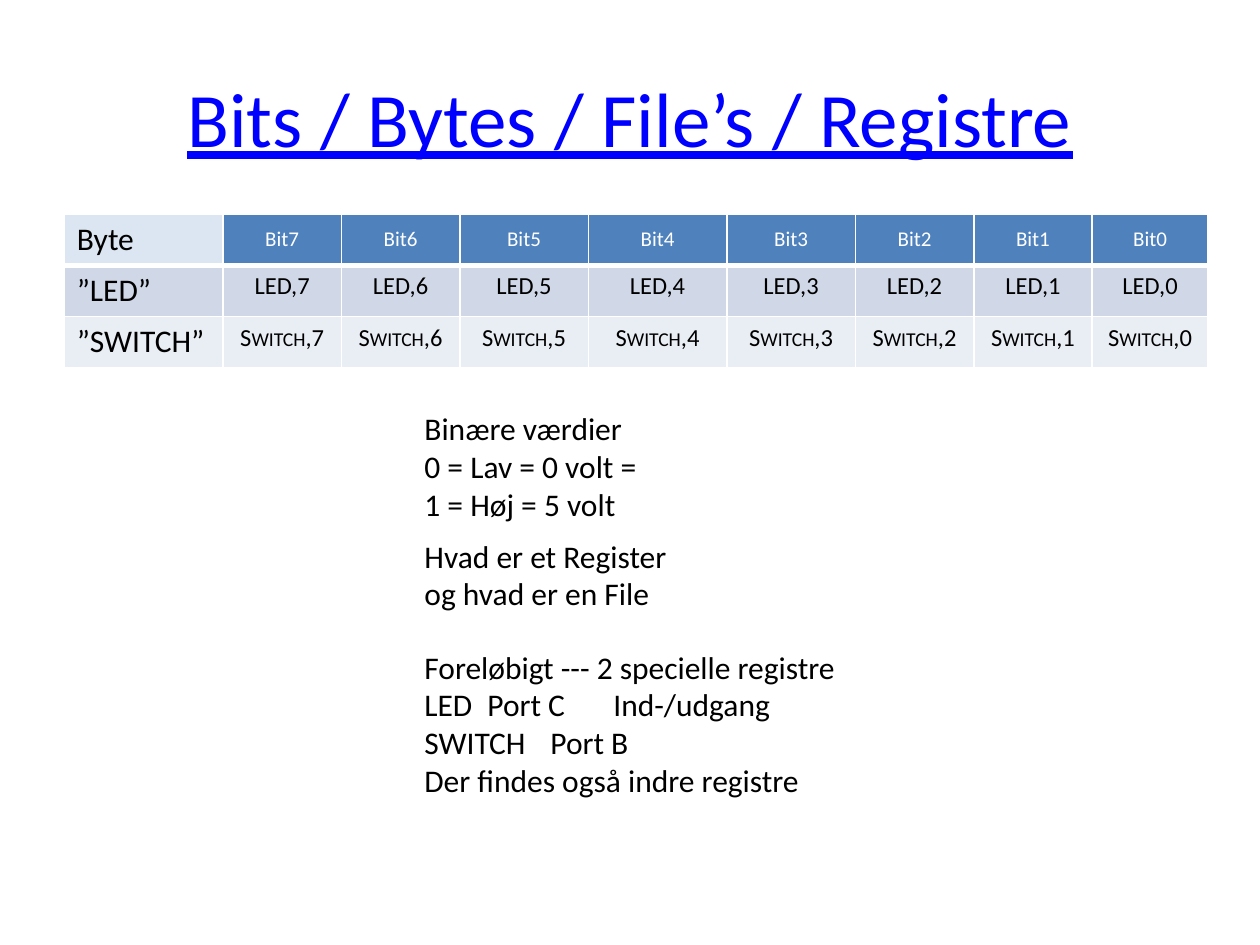
from dataclasses import dataclass

from lxml.etree import SubElement
from pptx import Presentation
from pptx.dml.color import RGBColor
from pptx.enum.text import MSO_ANCHOR, MSO_AUTO_SIZE, PP_ALIGN
from pptx.oxml.ns import qn
from pptx.util import Inches, Pt

FONT = "Calibri"
BLACK = "000000"
WHITE = "FFFFFF"
COLUMN_WIDTHS = [1.26, 0.94, 0.94, 1.02, 1.1, 1.02, 0.94, 0.94, 0.92]
ROW_HEIGHT = 0.4


@dataclass
class RegisterRow:
    heading: str
    prefix: str
    separator: str
    heading_fill: str
    bit_fill: str
    bit_color: str
    bit_size: int
    anchor: MSO_ANCHOR
    top_border: int
    bottom_border: int
    small_caps: bool = False


@dataclass
class Note:
    top: float
    width: float
    height: float
    lines: list[str]


ROWS = [
    RegisterRow("Byte", "Bit", "", "DCE6F2", "4F81BD", WHITE, 12, MSO_ANCHOR.MIDDLE, 1, 3),
    RegisterRow("”LED”", "LED", ",", "D0D8E8", "D0D8E8", BLACK, 14, MSO_ANCHOR.TOP, 3, 1),
    RegisterRow("”SWITCH”", "Switch", ",", "E9EDF4", "E9EDF4", BLACK, 14, MSO_ANCHOR.TOP, 1, 1, True),
]

NOTES = [
    Note(3.2, 1.91, 1.01, ["Binære værdier", "0 = Lav = 0 volt =", "1 = Høj = 5 volt"]),
    Note(4.21, 2.15, 0.71, ["Hvad er et Register", "og hvad er en File"]),
    Note(5.09, 3.56, 1.31, [
        "Foreløbigt --- 2 specielle registre",
        "LED\tPort C\tInd-/udgang",
        "SWITCH\tPort B",
        "Der findes også indre registre",
    ]),
]


def color(value: str) -> RGBColor:
    return RGBColor.from_string(value)


def format_text(frame, size: int, value: str) -> None:
    for para in frame.paragraphs:
        for span in para.runs:
            span.font.name = FONT
            span.font.size = Pt(size)
            span.font.bold = False
            span.font.color.rgb = color(value)


def add_title(page) -> None:
    title = page.shapes.title
    title.left, title.top, title.width, title.height = map(Inches, (0.5, 0.3, 9, 1.25))
    frame = title.text_frame
    frame.text = "Bits / Bytes / File’s / Registre"
    frame.vertical_anchor = MSO_ANCHOR.MIDDLE
    frame.paragraphs[0].alignment = PP_ALIGN.CENTER
    format_text(frame, 44, "0000FF")
    frame.paragraphs[0].runs[0].font.underline = True


def set_borders(cell, top: int, bottom: int) -> None:
    properties = cell._tc.get_or_add_tcPr()
    for side, points in (("L", 1), ("R", 1), ("T", top), ("B", bottom)):
        line = SubElement(properties, qn(f"a:ln{side}"), w=str(Pt(points)))
        fill = SubElement(line, qn("a:solidFill"))
        SubElement(fill, qn("a:srgbClr"), val=WHITE)


def style_cell(cell, row: RegisterRow, fill: str, size: int, value: str) -> None:
    set_borders(cell, row.top_border, row.bottom_border)
    cell.fill.solid()
    cell.fill.fore_color.rgb = color(fill)
    format_text(cell.text_frame, size, value)


def fill_bit_cell(cell, row: RegisterRow, bit: int) -> None:
    para = cell.text_frame.paragraphs[0]
    para.alignment = PP_ALIGN.CENTER
    cell.vertical_anchor = row.anchor
    if row.small_caps:
        name = para.add_run()
        name.text = row.prefix
        name._r.get_or_add_rPr().set("cap", "small")
        para.add_run().text = f"{row.separator}{bit}"
    else:
        para.text = f"{row.prefix}{row.separator}{bit}"
    style_cell(cell, row, row.bit_fill, row.bit_size, row.bit_color)


def add_register_table(page) -> None:
    table = page.shapes.add_table(
        len(ROWS), len(COLUMN_WIDTHS), Inches(0.51), Inches(1.7),
        Inches(sum(COLUMN_WIDTHS)), Inches(ROW_HEIGHT * len(ROWS)),
    ).table
    for column, width in zip(table.columns, COLUMN_WIDTHS):
        column.width = Inches(width)
    for row_index, row in enumerate(ROWS):
        table.rows[row_index].height = Inches(ROW_HEIGHT)
        heading = table.cell(row_index, 0)
        heading.text_frame.text = row.heading
        style_cell(heading, row, row.heading_fill, 18, BLACK)
        for column_index in range(1, len(COLUMN_WIDTHS)):
            bit = len(COLUMN_WIDTHS) - 1 - column_index
            fill_bit_cell(table.cell(row_index, column_index), row, bit)


def add_note(page, note: Note) -> None:
    box = page.shapes.add_textbox(
        Inches(3.27), Inches(note.top), Inches(note.width), Inches(note.height)
    )
    frame = box.text_frame
    frame.word_wrap = False
    frame.auto_size = MSO_AUTO_SIZE.SHAPE_TO_FIT_TEXT
    frame.text = "\n".join(note.lines)
    format_text(frame, 18, BLACK)


def main() -> None:
    deck = Presentation()
    deck.slide_width, deck.slide_height = Inches(10), Inches(7.5)
    page = deck.slides.add_slide(deck.slide_layouts[5])
    add_title(page)
    add_register_table(page)
    for note in NOTES:
        add_note(page, note)
    deck.save("out.pptx")


if __name__ == "__main__":
    main()
